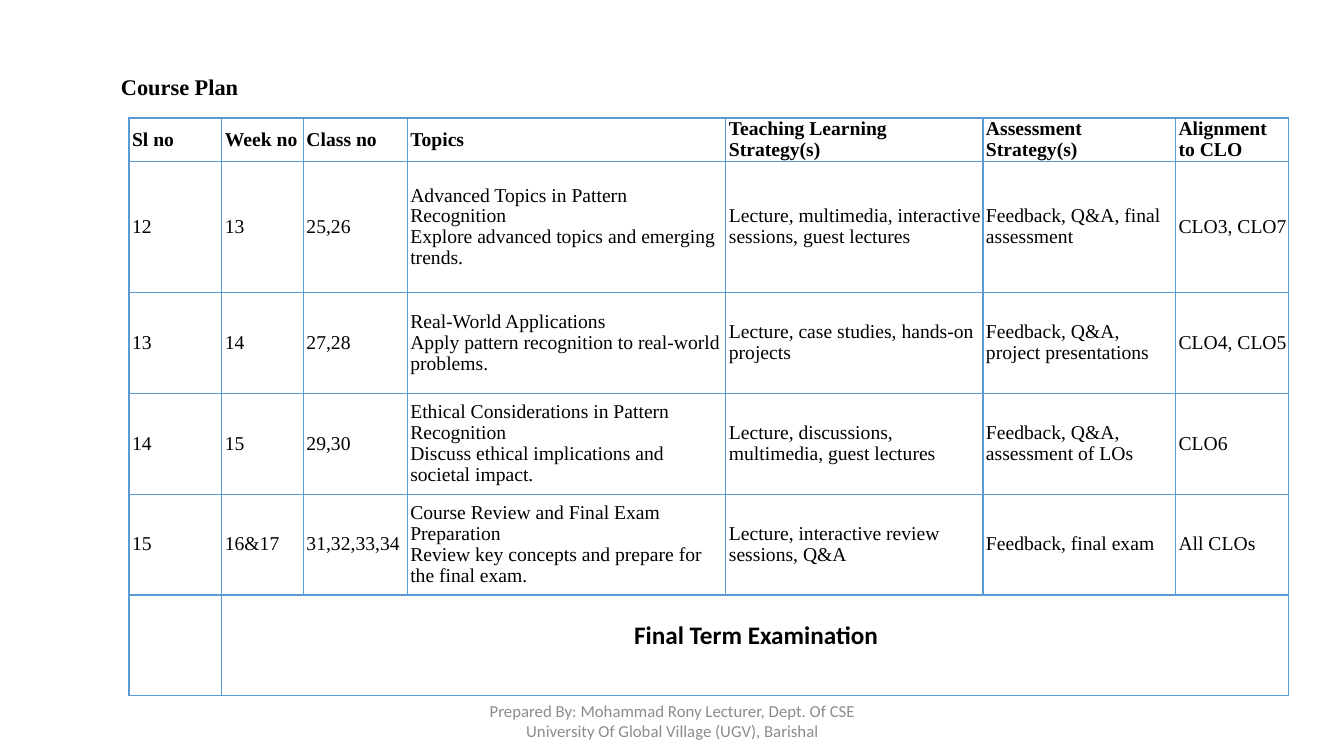
from lxml.etree import SubElement
from pptx import Presentation
from pptx.dml.color import RGBColor
from pptx.enum.text import MSO_ANCHOR as Anchor, PP_ALIGN as Align
from pptx.oxml.ns import qn
from pptx.util import Inches, Pt

SERIF, SANS = "Times New Roman", "Calibri"
COLS = [0.92, 0.81, 1.03, 3.16, 2.55, 1.91, 1.12]
ROWS = [0.4, 1.3, 1, 1, 1, 1]
PLAN = [
    ["Sl no", "Week no", "Class no", "Topics", "Teaching Learning Strategy(s)",
     "Assessment Strategy(s)", "Alignment to CLO"],
    ["12", "13", "25,26",
     "Advanced Topics in Pattern Recognition\nExplore advanced topics and emerging trends.",
     "Lecture, multimedia, interactive sessions, guest lectures",
     "Feedback, Q&A, final assessment", "CLO3, CLO7"],
    ["13", "14", "27,28",
     "Real-World Applications\nApply pattern recognition to real-world problems.",
     "Lecture, case studies, hands-on projects",
     "Feedback, Q&A, project presentations", "CLO4, CLO5"],
    ["14", "15", "29,30",
     "Ethical Considerations in Pattern Recognition\n"
     "Discuss ethical implications and societal impact.",
     "Lecture, discussions, multimedia, guest lectures",
     "Feedback, Q&A, assessment of LOs", "CLO6"],
    ["15", "16&17", "31,32,33,34",
     "Course Review and Final Exam Preparation\n"
     "Review key concepts and prepare for the final exam.",
     "Lecture, interactive review sessions, Q&A",
     "Feedback, final exam", "All CLOs"],
]


def color(code):
    return RGBColor.from_string(code)


def write(frame, text, size=14, face=SERIF, ink="000000", bold=False,
          align=Align.LEFT, pitch=None):
    frame.text = text
    for para in frame.paragraphs:
        para.alignment = align
        para.line_spacing = pitch
        for run in para.runs:
            font = run.font
            font.size, font.name, font.bold = Pt(size), face, bold
            font.color.rgb = color(ink)


class Page:
    line = "5B9BD5"

    def __init__(self, deck):
        self.slide = deck.slides.add_slide(deck.slide_layouts[6])

    def label(self, text, box, pad=(0, 0), wrap=True, anchor=Anchor.TOP, **style):
        frame = self.slide.shapes.add_textbox(*map(Inches, box)).text_frame
        frame.margin_left = frame.margin_right = Inches(pad[0])
        frame.margin_top = frame.margin_bottom = Inches(pad[1])
        frame.word_wrap, frame.vertical_anchor = wrap, anchor
        write(frame, text, **style)

    def border(self, cell):
        props = cell._tc.get_or_add_tcPr()
        for at, side in enumerate(("lnL", "lnR", "lnT", "lnB")):
            edge = SubElement(props, qn(f"a:{side}"), w=str(Pt(1)))
            fill = SubElement(edge, qn("a:solidFill"))
            SubElement(fill, qn("a:srgbClr"), val=self.line)
            props.insert(at, edge)

    def table(self, left, top, cols, rows):
        grid = self.slide.shapes.add_table(
            len(rows), len(cols), Inches(left), Inches(top),
            Inches(sum(cols)), Inches(sum(rows))).table
        grid.first_row = grid.horz_banding = False
        for col, width in zip(grid.columns, cols):
            col.width = Inches(width)
        for row, height in zip(grid.rows, rows):
            row.height = Inches(height)
        for cell in grid.iter_cells():
            cell.fill.background()
            cell.vertical_anchor = Anchor.MIDDLE
            cell.margin_left = Inches(0.03)
            cell.margin_top = cell.margin_right = cell.margin_bottom = Inches(0.01)
            self.border(cell)
        return grid


def main():
    deck = Presentation()
    deck.slide_width, deck.slide_height = Inches(13.33), Inches(7.5)
    page = Page(deck)

    grid = page.table(1.28, 1.17, COLS, ROWS)
    for r, row in enumerate(PLAN):
        for c, text in enumerate(row):
            write(grid.cell(r, c).text_frame, text, bold=r == 0, pitch=0.96)
    last = len(ROWS) - 1
    exam = grid.cell(last, 1)
    exam.merge(grid.cell(last, len(COLS) - 1))
    exam.margin_bottom = Inches(0.19)
    write(exam.text_frame, "Final Term Examination", size=18, face=SANS,
          bold=True, align=Align.CENTER)

    page.label("Course Plan", (1.2, 0.73, 1.17, 0.26), wrap=False, size=16, bold=True)
    page.label("Prepared By: Mohammad Rony Lecturer, Dept. Of CSE "
               "University Of Global Village (UGV), Barishal",
               (4.42, 6.95, 4.5, 0.4), pad=(0.1, 0.05), anchor=Anchor.MIDDLE,
               size=12, face=SANS, ink="8C8C8C", align=Align.CENTER)
    deck.save("out.pptx")


if __name__ == "__main__":
    main()
